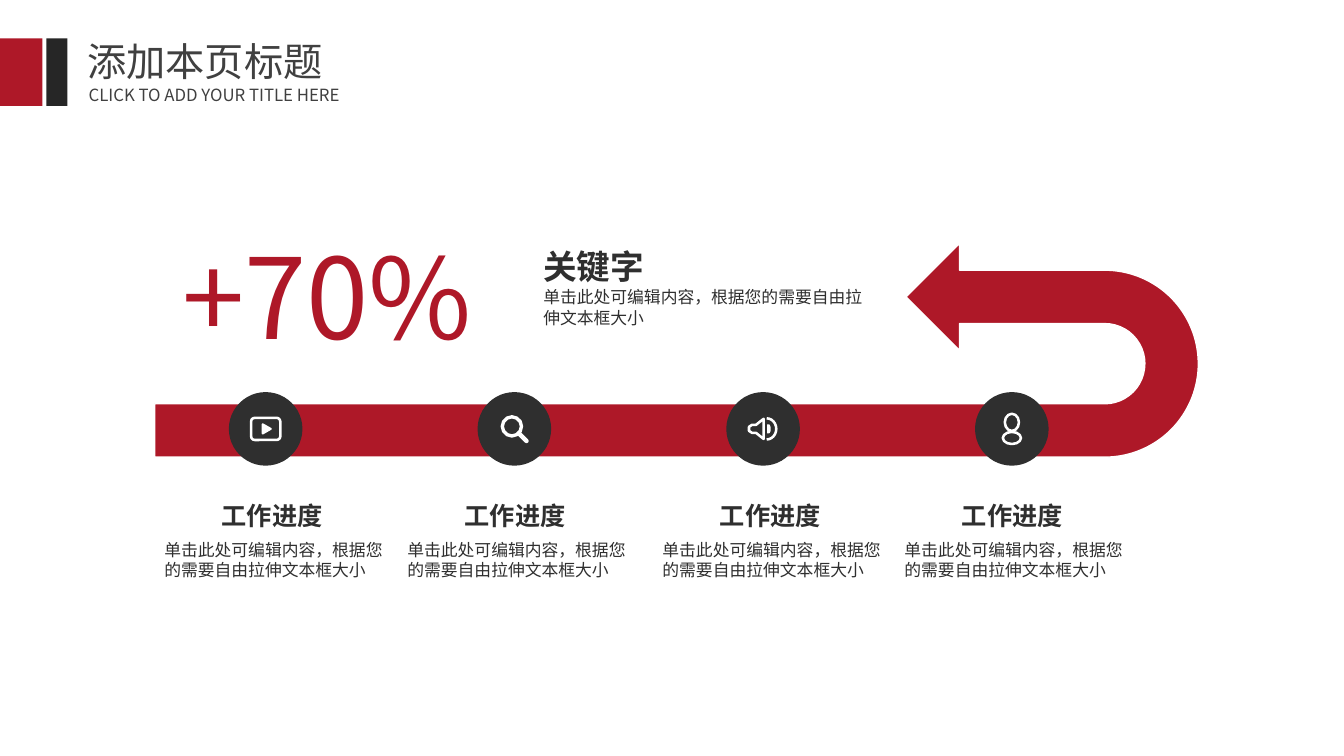
from lxml.etree import SubElement
from pptx import Presentation
from pptx.dml.color import RGBColor
from pptx.enum.shapes import MSO_CONNECTOR, MSO_SHAPE
from pptx.enum.text import MSO_AUTO_SIZE, PP_ALIGN
from pptx.oxml.ns import qn
from pptx.util import Inches, Pt

RED = RGBColor(0xAE, 0x18, 0x28)
DARK = RGBColor(0x2F, 0x2F, 0x2F)
BLACK = RGBColor(0x26, 0x26, 0x26)
GREY = RGBColor(0x40, 0x40, 0x40)
WHITE = RGBColor(0xFF, 0xFF, 0xFF)
FONT = "Noto Sans CJK SC"

CELL = Inches(0.01)
COLUMNS, ROWS = 1333, 750

BODY = "单击此处可编辑内容，根据您的需要自由拉伸文本框大小"
STEPS = [(163, "工作进度", BODY), (404, "工作进度", BODY),
         (657, "工作进度", BODY), (897, "工作进度", BODY)]
HEADINGS = [
    ("+70%", (171, 221, 388, 145), 80, RED, False, PP_ALIGN.LEFT),
    (BODY, (529, 280, 337, 50), 12, DARK, False, PP_ALIGN.LEFT),
    ("关键字", (529, 239, 337, 50), 24, DARK, True, PP_ALIGN.LEFT),
    ("添加本页标题", (77, 32, 313, 57), 28, GREY, False, PP_ALIGN.JUSTIFY),
    ("CLICK TO ADD YOUR TITLE HERE", (78, 79, 312, 30), 12, GREY, False, PP_ALIGN.JUSTIFY),
]
TITLE_BARS = [((0, 38, 42, 67), RED), ((46, 38, 21, 67), BLACK)]

ARROW_BOX = (565, -170, 212, 1035)
ARROW_ADJUSTMENTS = (0.25, 0.25, 0.25, 0.44, 0.28)
FIRST_CENTER, CENTER_STEP, CENTER_ROW, DISC = 263.5, 246.7, 425.5, 73

PLAY = [("outline", MSO_SHAPE.ROUNDED_RECTANGLE, (-14.5, -11, 29, 22), 1.8),
        ("polygon", [(-3, -4.5), (5, 0), (-3, 4.5)], True, 1.5)]
SEARCH = [("outline", MSO_SHAPE.OVAL, (-12, -12, 19, 19), 2.4),
          ("line", (4.5, 4.5, 12, 12), 3.2)]
SPEAKER = [("polygon", [(-14, -2), (-11, -4), (-7, -4), (0.5, -10), (0.5, 10),
                        (-7, 4), (-11, 4), (-14, 2)], False, 1.8),
           ("solid", MSO_SHAPE.FLOWCHART_DELAY, (4, -4.5, 3.5, 9)),
           ("outline", MSO_SHAPE.ARC, (-6, -10.5, 19, 21), 1.8)]
PERSON = [("outline", MSO_SHAPE.OVAL, (-7, -15, 14, 17), 1.8),
          ("outline", MSO_SHAPE.OVAL, (-9, 3, 18, 12), 1.8)]
ICONS = [PLAY, SEARCH, SPEAKER, PERSON]


def cells(values):
    return [round(value * CELL) for value in values]


def paint(shape, fill=None, line=None, width=1):
    shape.shadow.inherit = False
    if fill is None:
        shape.fill.background()
    else:
        shape.fill.solid()
        shape.fill.fore_color.rgb = fill
    if line is None:
        shape.line.fill.background()
    else:
        shape.line.color.rgb = line
        shape.line.width = Pt(width)


def add_preset(slide, kind, box, fill=None, line=None, width=1):
    shape = slide.shapes.add_shape(kind, *cells(box))
    paint(shape, fill, line, width)
    return shape


def add_text(slide, text, box, size, color, bold, align, inset=True):
    frame = slide.shapes.add_textbox(*cells(box)).text_frame
    frame.word_wrap = True
    frame.auto_size = MSO_AUTO_SIZE.SHAPE_TO_FIT_TEXT
    if not inset:
        frame.margin_left = frame.margin_right = 0
        frame.margin_top = frame.margin_bottom = 0
    frame.text = text
    paragraph = frame.paragraphs[0]
    paragraph.alignment = align
    font = paragraph.runs[0].font
    font.size, font.bold, font.name = Pt(size), bold, FONT
    font.color.rgb = color
    properties = paragraph.runs[0]._r.get_or_add_rPr()
    SubElement(properties, qn("a:ea")).set("typeface", FONT)


def add_icon(slide, parts, center):
    def shifted(x, y):
        return center + x, CENTER_ROW + y

    for kind, *details in parts:
        if kind == "polygon":
            points, solid, width = details
            corners = [cells(shifted(*point)) for point in points]
            builder = slide.shapes.build_freeform(*corners[0])
            builder.add_line_segments(corners[1:], close=True)
            paint(builder.convert_to_shape(), WHITE if solid else None, WHITE, width)
        elif kind == "line":
            (left, top, right, bottom), width = details
            ends = cells(shifted(left, top) + shifted(right, bottom))
            handle = slide.shapes.add_connector(MSO_CONNECTOR.STRAIGHT, *ends)
            handle.line.color.rgb = WHITE
            handle.line.width = Pt(width)
            handle.line._get_or_add_ln().set("cap", "rnd")
            SubElement(handle._element.spPr, qn("a:effectLst"))
        else:
            preset, (x, y, width, height), *stroke = details
            box = shifted(x, y) + (width, height)
            if kind == "solid":
                add_preset(slide, preset, box, WHITE)
            else:
                shape = add_preset(slide, preset, box, None, WHITE, *stroke)
                if preset == MSO_SHAPE.ARC:
                    shape.adjustments[0], shape.adjustments[1] = 162, 54


def main():
    presentation = Presentation()
    presentation.slide_width = COLUMNS * CELL
    presentation.slide_height = ROWS * CELL
    slide = presentation.slides.add_slide(presentation.slide_layouts[6])

    arrow = add_preset(slide, MSO_SHAPE.U_TURN_ARROW, ARROW_BOX, RED, WHITE)
    arrow.rotation = 90
    arrow._element.spPr.find(qn("a:xfrm")).set("flipH", "1")
    for index, value in enumerate(ARROW_ADJUSTMENTS):
        arrow.adjustments[index] = value

    for index, icon in enumerate(ICONS):
        center = FIRST_CENTER + index * CENTER_STEP
        disc_box = (center - DISC / 2, CENTER_ROW - DISC / 2, DISC, DISC)
        add_preset(slide, MSO_SHAPE.OVAL, disc_box, DARK)
        add_icon(slide, icon, center)

    for heading in HEADINGS:
        add_text(slide, *heading)
    for left, title, body in STEPS:
        add_text(slide, title, (left, 496, 214, 30), 18, DARK, True, PP_ALIGN.CENTER, False)
        add_text(slide, body, (left, 535, 221, 40), 12, DARK, False, PP_ALIGN.LEFT, False)
    for box, color in TITLE_BARS:
        add_preset(slide, MSO_SHAPE.RECTANGLE, box, color)

    presentation.save("out.pptx")


if __name__ == "__main__":
    main()
